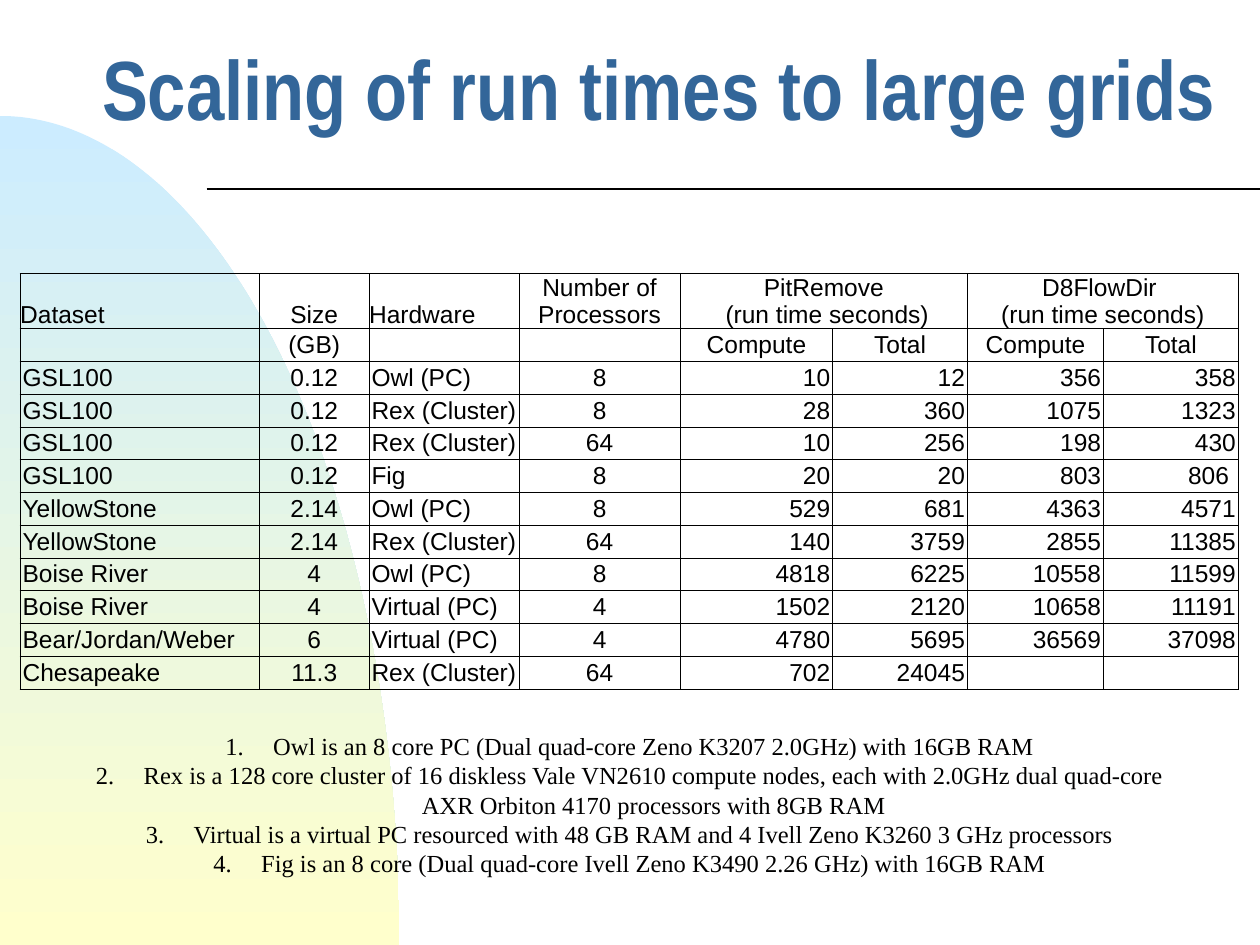
import math
from dataclasses import dataclass

from lxml import etree
from pptx import Presentation
from pptx import util as u
from pptx.dml.color import RGBColor
from pptx.enum import shapes, text
from pptx.oxml import ns

Inches = u.Inches


@dataclass(frozen=True)
class Theme:
    title: RGBColor = RGBColor(0x33, 0x66, 0x99)
    ink: RGBColor = RGBColor(0x01, 0x00, 0x00)
    grid: RGBColor = RGBColor(0x00, 0x00, 0x00)
    sky: RGBColor = RGBColor(0xCC, 0xEC, 0xFF)
    sand: RGBColor = RGBColor(0xFF, 0xFF, 0xCC)
    title_font: str = "Arial Narrow"
    table_font: str = "Arial"
    note_font: str = "Times New Roman"
    title_size: int = 48
    body_size: int = 14


THEME = Theme()
LEFT, CENTER, RIGHT = text.PP_ALIGN.LEFT, text.PP_ALIGN.CENTER, text.PP_ALIGN.RIGHT

COLUMN_WIDTHS = [1.9, 0.87, 1.19, 1.28, 1.21, 1.07, 1.08, 1.07]
COLUMN_ALIGNS = [LEFT, CENTER, LEFT, CENTER] + [RIGHT] * 4
HEADERS = [
    ["Dataset", "Size", "Hardware", "Number of Processors",
     "PitRemove\v (run time seconds)", "", "D8FlowDir \v(run time seconds)", ""],
    ["", "(GB)", "", "", "Compute", "Total", "Compute", "Total"],
]
RUNS = [
    ["GSL100", "0.12", "Owl (PC)", "8", "10", "12", "356", "358"],
    ["GSL100", "0.12", "Rex (Cluster)", "8", "28", "360", "1075", "1323"],
    ["GSL100", "0.12", "Rex (Cluster)", "64", "10", "256", "198", "430"],
    ["GSL100", "0.12", "Fig", "8", "20", "20", "803", "806 "],
    ["YellowStone", "2.14", "Owl (PC)", "8", "529", "681", "4363", "4571"],
    ["YellowStone", "2.14", "Rex (Cluster)", "64", "140", "3759", "2855", "11385"],
    ["Boise River", "4", "Owl (PC)", "8", "4818", "6225", "10558", "11599"],
    ["Boise River", "4", "Virtual (PC)", "4", "1502", "2120", "10658", "11191"],
    ["Bear/Jordan/Weber", "6", "Virtual (PC)", "4", "4780", "5695", "36569", "37098"],
    ["Chesapeake", "11.3", "Rex (Cluster)", "64", "702", "24045", "", ""],
]
NOTES = [
    "Owl is an 8 core PC (Dual quad-core Zeno K3207 2.0GHz) with 16GB RAM",
    "Rex is a 128 core cluster of 16 diskless Vale VN2610 compute nodes, each with "
    "2.0GHz dual quad-core AXR Orbiton 4170 processors with 8GB RAM",
    "Virtual is a virtual PC resourced with 48 GB RAM and 4 Ivell Zeno K3260 3 GHz processors",
    "Fig is an 8 core (Dual quad-core Ivell Zeno K3490 2.26 GHz) with 16GB RAM",
]


def set_font(para, name, size, color, bold=False):
    font = para.font
    font.name, font.size, font.bold = name, u.Pt(size), bold
    font.color.rgb = color


def add_backdrop(page, left, top, width, height, steps=90):
    angles = [math.pi / 2 * step / steps for step in range(steps + 1)]
    arc = [(left + int(width * math.sin(a)), top + int(height * (1 - math.cos(a))))
           for a in angles]
    builder = page.shapes.build_freeform(*arc[0])
    builder.add_line_segments(arc[1:] + [(left, top + height)], close=True)
    hill = builder.convert_to_shape()
    hill.shadow.inherit = False
    hill.line.fill.background()
    hill.fill.gradient()
    hill.fill.gradient_angle = 270
    for stop, color, position in zip(hill.fill.gradient_stops, (THEME.sky, THEME.sand), (0, 1)):
        stop.color.rgb = color
        stop.position = position


def add_rule(page, left, top, width):
    rule = page.shapes.add_connector(
        shapes.MSO_CONNECTOR.STRAIGHT, left, top, left + width, top)
    rule.line.color.rgb = THEME.ink
    rule.line.width = u.Pt(1)
    etree.SubElement(rule._element.spPr, ns.qn("a:effectLst"))


def place_title(page, left, top, width, height):
    title = page.shapes.title
    title.left, title.top, title.width, title.height = left, top, width, height
    frame = title.text_frame
    frame.text = "Scaling of run times to large grids"
    frame.auto_size = text.MSO_AUTO_SIZE.NONE
    frame.vertical_anchor = text.MSO_ANCHOR.MIDDLE
    frame.margin_right = 0
    para = frame.paragraphs[0]
    para.alignment = LEFT
    para.line_spacing = 0.7
    set_font(para, THEME.title_font, THEME.title_size, THEME.title, bold=True)


def draw_borders(cell):
    properties = cell._tc.get_or_add_tcPr()
    for index, side in enumerate(("lnL", "lnR", "lnT", "lnB")):
        border = etree.Element(ns.qn(f"a:{side}"), w=str(u.Pt(0.5)))
        fill = etree.SubElement(border, ns.qn("a:solidFill"))
        etree.SubElement(fill, ns.qn("a:srgbClr"), val=str(THEME.grid))
        properties.insert(index, border)


def format_cell(cell, content, align, anchor, inset):
    cell.text = content
    cell.vertical_anchor = anchor
    cell.margin_left = cell.margin_right = inset
    cell.margin_top = cell.margin_bottom = 0
    cell.fill.background()
    para = cell.text_frame.paragraphs[0]
    para.alignment = align
    set_font(para, THEME.table_font, THEME.body_size, THEME.grid)
    if not content:
        etree.SubElement(para._p, ns.qn("a:endParaRPr"), sz=str(THEME.body_size * 100))
    draw_borders(cell)


def add_run_times(page, left, top, width, height):
    rows = HEADERS + RUNS
    frame = page.shapes.add_table(len(rows), len(COLUMN_WIDTHS), left, top, width, height)
    table = frame.table
    table.first_row = table.horz_banding = False
    for column, share in zip(table.columns, COLUMN_WIDTHS):
        column.width = int(width * share / sum(COLUMN_WIDTHS))
    row_height = Inches(0.26)
    for row in table.rows:
        row.height = row_height
    table.rows[0].height = height - row_height * (len(rows) - 1)
    for r, row in enumerate(rows):
        for c, content in enumerate(row):
            align = CENTER if r < len(HEADERS) and c > 2 else COLUMN_ALIGNS[c]
            anchor = text.MSO_ANCHOR.MIDDLE if r else text.MSO_ANCHOR.BOTTOM
            format_cell(table.cell(r, c), content, align, anchor, Inches(0.02 if r else 0))
    for c in (4, 6):
        table.cell(0, c).merge(table.cell(0, c + 1))


def add_notes_list(page, left, top, width, height):
    box = page.shapes.add_textbox(left, top, width, height)
    frame = box.text_frame
    frame.word_wrap = True
    for index, note in enumerate(NOTES):
        para = frame.add_paragraph() if index else frame.paragraphs[0]
        para.text = note
        para.alignment = CENTER
        set_font(para, THEME.note_font, THEME.body_size, THEME.ink)
        properties = para._p.get_or_add_pPr()
        properties.set("marL", str(Inches(0.38)))
        properties.set("indent", str(-Inches(0.38)))
        number = etree.Element(ns.qn("a:buAutoNum"), type="arabicPeriod")
        properties.insert(0, number)


def main():
    deck = Presentation()
    deck.slide_width, deck.slide_height = Inches(10), Inches(7.5)
    page = deck.slides.add_slide(deck.slide_layouts[5])
    add_backdrop(page, 0, Inches(0.92), Inches(3.17), Inches(6.58))
    add_rule(page, Inches(1.64), Inches(1.5), Inches(8.36))
    add_run_times(page, Inches(0.16), Inches(2.17), Inches(9.67), Inches(3.3))
    add_notes_list(page, Inches(0.5), Inches(5.75), Inches(9), Inches(1.28))
    place_title(page, Inches(0.71), Inches(0.16), Inches(9.04), Inches(1.25))
    deck.save("out.pptx")


if __name__ == "__main__":
    main()
